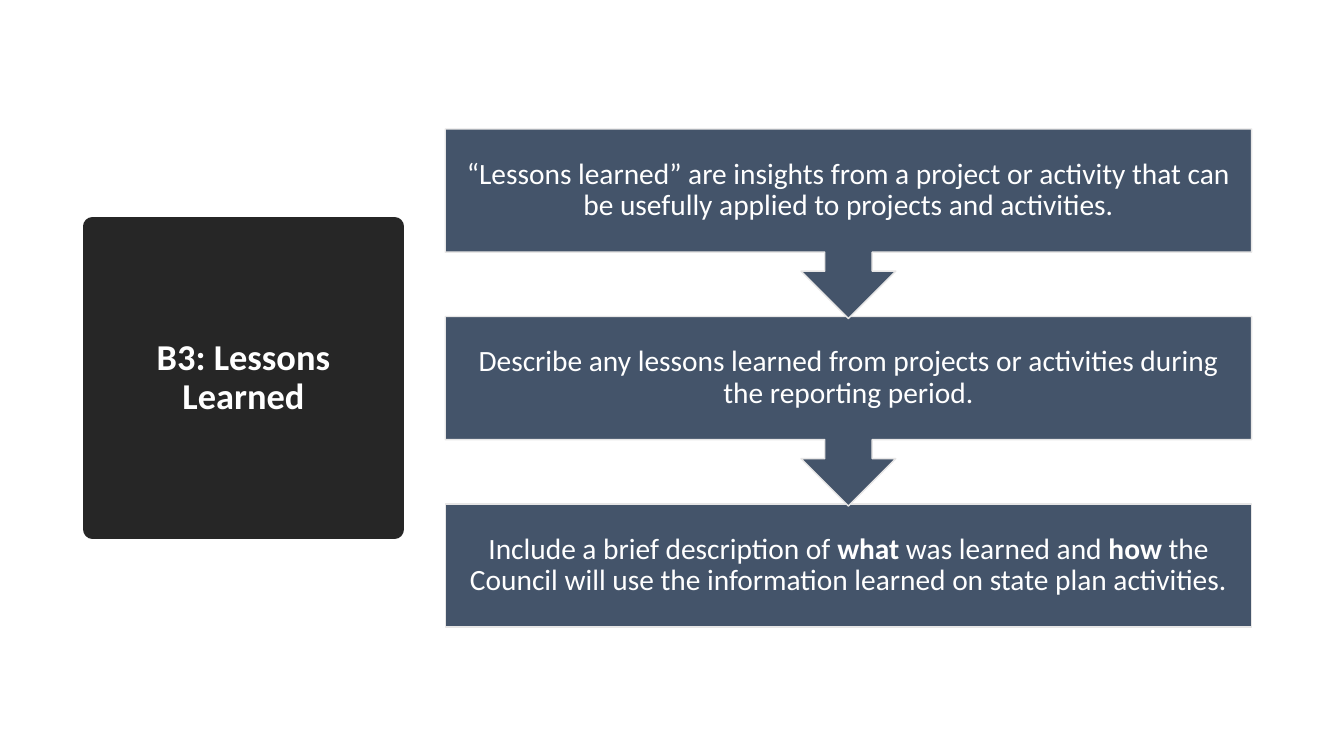
from dataclasses import dataclass

from lxml import etree
from pptx import Presentation
from pptx import util as u
from pptx.dml.color import RGBColor
from pptx.enum import shapes, text
from pptx.oxml import ns
from pptx.shapes.autoshape import Shape
from pptx.slide import Slide

COLUMNS, ROWS = 160, 90


@dataclass(frozen=True)
class Theme:
    font: str = "Calibri"
    white: str = "FFFFFF"
    title_fill: str = "262626"
    step_fill: str = "44546A"
    step_line: str = "E7E6E6"
    title_size: float = 26
    step_size: float = 21
    title_border: float = 13.75
    step_border: float = 1
    line_spacing: float = 0.9


@dataclass(frozen=True)
class Area:
    column: float
    row: float
    columns: float
    rows: float


@dataclass(frozen=True)
class Run:
    text: str
    bold: bool = False


@dataclass(frozen=True)
class Box:
    kind: shapes.MSO_SHAPE
    area: Area
    runs: tuple[Run, ...]
    size: float
    fill: str
    line: str
    border: float
    inset: float


THEME = Theme()
CELL_WIDTH = u.Inches(13.33) / COLUMNS
CELL_HEIGHT = u.Inches(7.5) / ROWS
FIRST_STEP_ROW = 15.36
STEP_PITCH = 22.32
BOX_ROWS = 14.64
CALLOUT_ROWS = 22.56

STEPS: list[tuple[Run, ...]] = [
    (Run("“Lessons learned” are insights from a project or activity that can "
         "be usefully applied to projects and activities."),),
    (Run("Describe any lessons learned from projects or activities during "
         "the reporting period."),),
    (
        Run("Include a brief description of "),
        Run("what", bold=True),
        Run(" was learned and "),
        Run("how", bold=True),
        Run(" the Council will use the information learned on state plan activities."),
    ),
]


def draw_box(s: Slide, box: Box) -> Shape:
    a = box.area
    sp = s.shapes.add_shape(
        box.kind,
        u.Emu(round(a.column * CELL_WIDTH)),
        u.Emu(round(a.row * CELL_HEIGHT)),
        u.Emu(round(a.columns * CELL_WIDTH)),
        u.Emu(round(a.rows * CELL_HEIGHT)),
    )
    sp.shadow.inherit = False
    sp.fill.solid()
    sp.fill.fore_color.rgb = RGBColor.from_string(box.fill)
    sp.line.color.rgb = RGBColor.from_string(box.line)
    sp.line.width = u.Pt(box.border)

    tf = sp.text_frame
    tf.word_wrap = True
    tf.vertical_anchor = text.MSO_ANCHOR.MIDDLE
    inset = u.Inches(box.inset)
    tf.margin_left = tf.margin_right = tf.margin_top = tf.margin_bottom = inset
    p = tf.paragraphs[0]
    p.alignment = text.PP_ALIGN.CENTER
    p.line_spacing = THEME.line_spacing
    for run in box.runs:
        r = p.add_run()
        r.text = run.text
        r.font.name = THEME.font
        r.font.size = u.Pt(box.size)
        r.font.bold = run.bold
        r.font.color.rgb = RGBColor.from_string(THEME.white)
    return sp


def draw_title(s: Slide) -> None:
    sp = draw_box(s, Box(
        shapes.MSO_SHAPE.RECTANGLE, Area(11, 27, 36, 36),
        (Run("B3: Lessons Learned", bold=True),), THEME.title_size,
        THEME.title_fill, THEME.title_fill, THEME.title_border, 0.1,
    ))
    etree.SubElement(sp.line._get_or_add_ln(), ns.qn("a:round"))


def draw_step(s: Slide, index: int) -> None:
    last = index == len(STEPS) - 1
    kind = shapes.MSO_SHAPE.RECTANGLE if last else shapes.MSO_SHAPE.DOWN_ARROW_CALLOUT
    rows = BOX_ROWS if last else CALLOUT_ROWS
    draw_box(s, Box(
        kind, Area(53, FIRST_STEP_ROW + index * STEP_PITCH, 96, rows),
        STEPS[index], THEME.step_size,
        THEME.step_fill, THEME.step_line, THEME.step_border, 0.16,
    ))


def main() -> None:
    prs = Presentation()
    prs.slide_width, prs.slide_height = u.Inches(13.33), u.Inches(7.5)
    s = prs.slides.add_slide(prs.slide_layouts[6])
    draw_title(s)
    for index in reversed(range(len(STEPS))):
        draw_step(s, index)
    prs.save("out.pptx")


if __name__ == "__main__":
    main()
